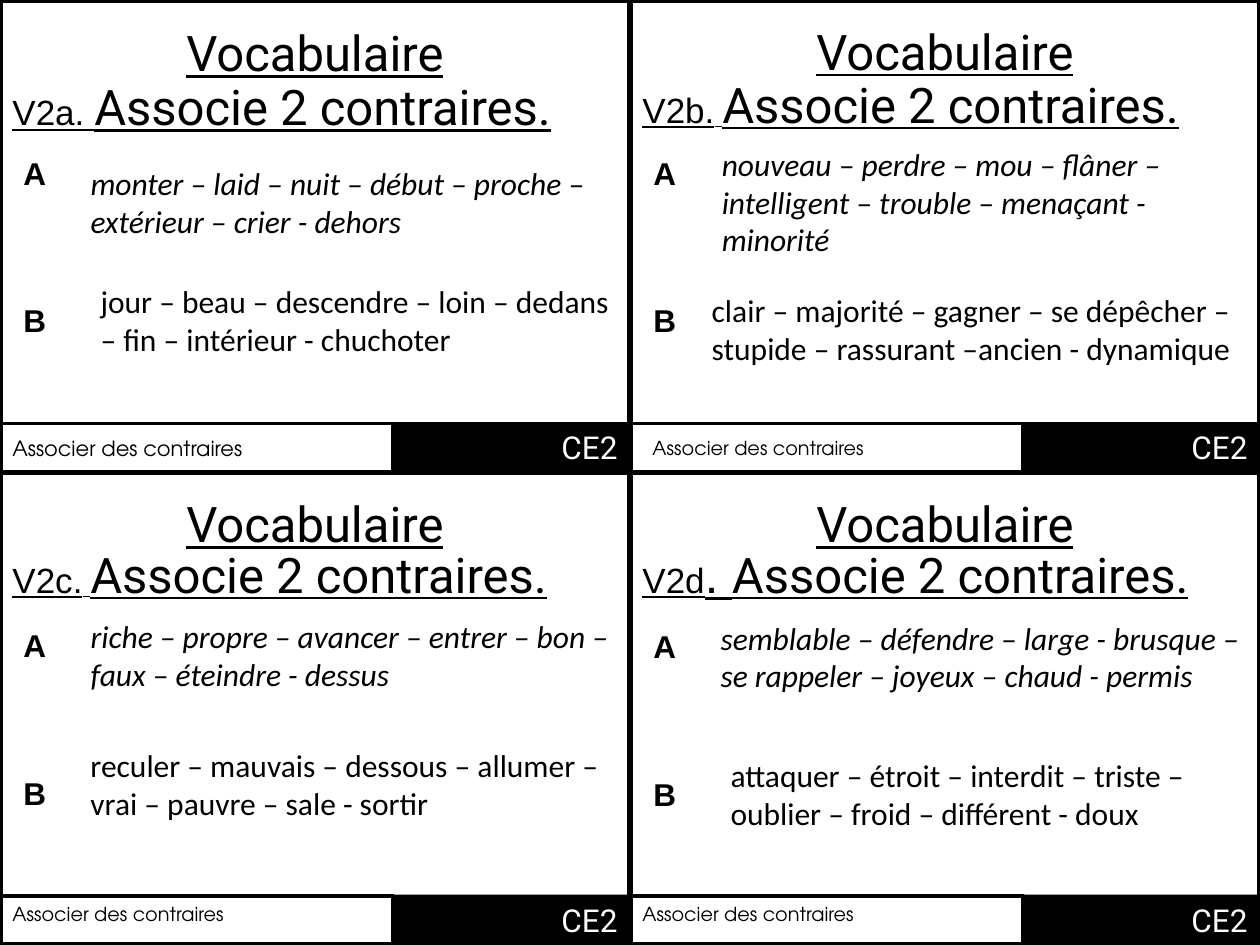
from pptx import Presentation
from pptx.dml.color import RGBColor
from pptx.enum.shapes import MSO_SHAPE
from pptx.enum.text import MSO_ANCHOR, MSO_AUTO_SIZE, PP_ALIGN
from pptx.util import Inches, Pt

COLORS = {"ink": "000000", "paper": "FFFFFF"}
WIDE, HIGH = 5, 3.75
TASK = ("Associe 2 contraires.", "Roboto", 28)

# Offsets are inches from the card's corner: (left, top, width, height).
CARDS = [
    {"code": [("V2a. ", "Arial", 20)],
     "head": 0.13, "task": 0.56, "marks": 1.17,
     "a": "monter – laid – nuit – début – proche – extérieur – crier - dehors",
     "a_box": (0.62, 1.25, 4.38, 0.71),
     "b": "jour – beau – descendre – loin – dedans – fin – intérieur - chuchoter",
     "b_box": (0.7, 2.19, 4.3, 0.71),
     "skill": (0, 3.41, 3.12, 0.3), "size": 12},
    {"code": [("V2b.", "Arial", 20), (" ", "Arial", 16)],
     "head": 0.12, "task": 0.54, "marks": 1.17,
     "a": "nouveau – perdre – mou – flâner – intelligent – trouble – menaçant - minorité",
     "a_box": (0.63, 1.1, 4.38, 1.01),
     "b": "clair – majorité – gagner – se dépêcher – stupide – rassurant –ancien - dynamique",
     "b_box": (0.55, 2.26, 4.45, 0.71),
     "skill": (0.08, 3.41, 3.12, 0.29), "size": 11},
    {"code": [("V2c.", "Arial", 20), (" ", "Arial", 16)],
     "head": 0.12, "task": 0.52, "marks": 1.17,
     "a": "riche – propre – avancer – entrer – bon – faux – éteindre - dessus",
     "a_box": (0.62, 1.1, 4.38, 0.71),
     "b": "reculer – mauvais – dessous – allumer – vrai – pauvre – sale - sortir",
     "b_box": (0.62, 2.12, 4.3, 0.71),
     "skill": (0, 3.36, 3.12, 0.29), "size": 11},
    {"code": [("V2d", "Arial", 20), (". ", "Arial", 28)],
     "head": 0.12, "task": 0.52, "marks": 1.18,
     "a": "semblable – défendre – large - brusque – se rappeler – joyeux – chaud - permis",
     "a_box": (0.62, 1.11, 4.38, 0.71),
     "b": "attaquer – étroit – interdit – triste – oublier – froid – différent - doux",
     "b_box": (0.7, 2.2, 4.3, 0.71),
     "skill": (0, 3.36, 3.12, 0.29), "size": 11},
]


def color(name):
    return RGBColor.from_string(COLORS[name])


def place(origin, box):
    """Turn a box relative to the card's corner into slide lengths."""
    left, top, wide, high = box
    return (Inches(origin[0] + left), Inches(origin[1] + top),
            Inches(wide), Inches(high))


def write(shape, runs, align=PP_ALIGN.LEFT, ink="ink", bold=False,
          italic=False, under=False):
    """Fill a shape with one paragraph of (text, font, size) runs."""
    frame = shape.text_frame
    frame.word_wrap = True
    frame.auto_size = MSO_AUTO_SIZE.NONE
    frame.vertical_anchor = MSO_ANCHOR.TOP
    para = frame.paragraphs[0]
    para.alignment = align
    for text, face, size in runs:
        run = para.add_run()
        run.text = text
        font = run.font
        font.name, font.size = face, Pt(size)
        font.bold, font.italic, font.underline = bold, italic, under
        font.color.rgb = color(ink)


def label(slide, origin, box, runs, **style):
    write(slide.shapes.add_textbox(*place(origin, box)), runs, **style)


def block(slide, origin, box, fill=None, line=None):
    shape = slide.shapes.add_shape(MSO_SHAPE.RECTANGLE, *place(origin, box))
    shape.shadow.inherit = False
    if fill:
        shape.fill.solid()
        shape.fill.fore_color.rgb = color(fill)
    else:
        shape.fill.background()
    if line:
        shape.line.color.rgb = color("ink")
        shape.line.width = Pt(line)
    else:
        shape.line.fill.background()
    return shape


def header(slide, origin, card, title=None):
    """Write the subject and task; the subject may use the title placeholder."""
    spot = place(origin, (0, card["head"], WIDE, 0.57))
    if title is None:
        title = slide.shapes.add_textbox(*spot)
    title.left, title.top, title.width, title.height = spot
    write(title, [("Vocabulaire", "Roboto", 28)], PP_ALIGN.CENTER, under=True)
    label(slide, origin, (0, card["task"], 4.92, 0.57),
          card["code"] + [TASK], under=True)


def lists(slide, origin, card):
    for row, key in enumerate("ab"):
        label(slide, origin, card[key + "_box"],
              [(card[key], "Calibri", 18)], italic=key == "a")
        label(slide, origin, (0, card["marks"] + 1.17 * row, 0.55, 0.4),
              [(key.upper(), "Arial", 18)], align=PP_ALIGN.CENTER, bold=True)


def footer(slide, origin, card):
    badge = block(slide, origin, (3.12, 3.35, 1.88, 0.4), fill="ink")
    write(badge, [("CE2", "Roboto", 18)], PP_ALIGN.RIGHT, ink="paper")
    block(slide, origin, (0, 3.36, 3.12, 0.39), line=2)
    label(slide, origin, card["skill"],
          [("Associer des contraires", "TeX Gyre Adventor", card["size"])])


def main():
    deck = Presentation()
    deck.slide_width, deck.slide_height = Inches(2 * WIDE), Inches(2 * HIGH)
    slide = deck.slides.add_slide(deck.slide_layouts[5])
    spots = [(i % 2 * WIDE, i // 2 * HIGH) for i in range(len(CARDS))]
    for origin in spots:
        block(slide, origin, (0, 0, WIDE, HIGH), fill="paper", line=3)

    # Bring the title in front of the card backgrounds.
    title = slide.shapes.title
    slide.shapes._spTree.append(title.element)
    for origin, card in zip(spots, CARDS):
        header(slide, origin, card, title)
        title = None
        lists(slide, origin, card)
        footer(slide, origin, card)
    deck.save("out.pptx")


if __name__ == "__main__":
    main()
